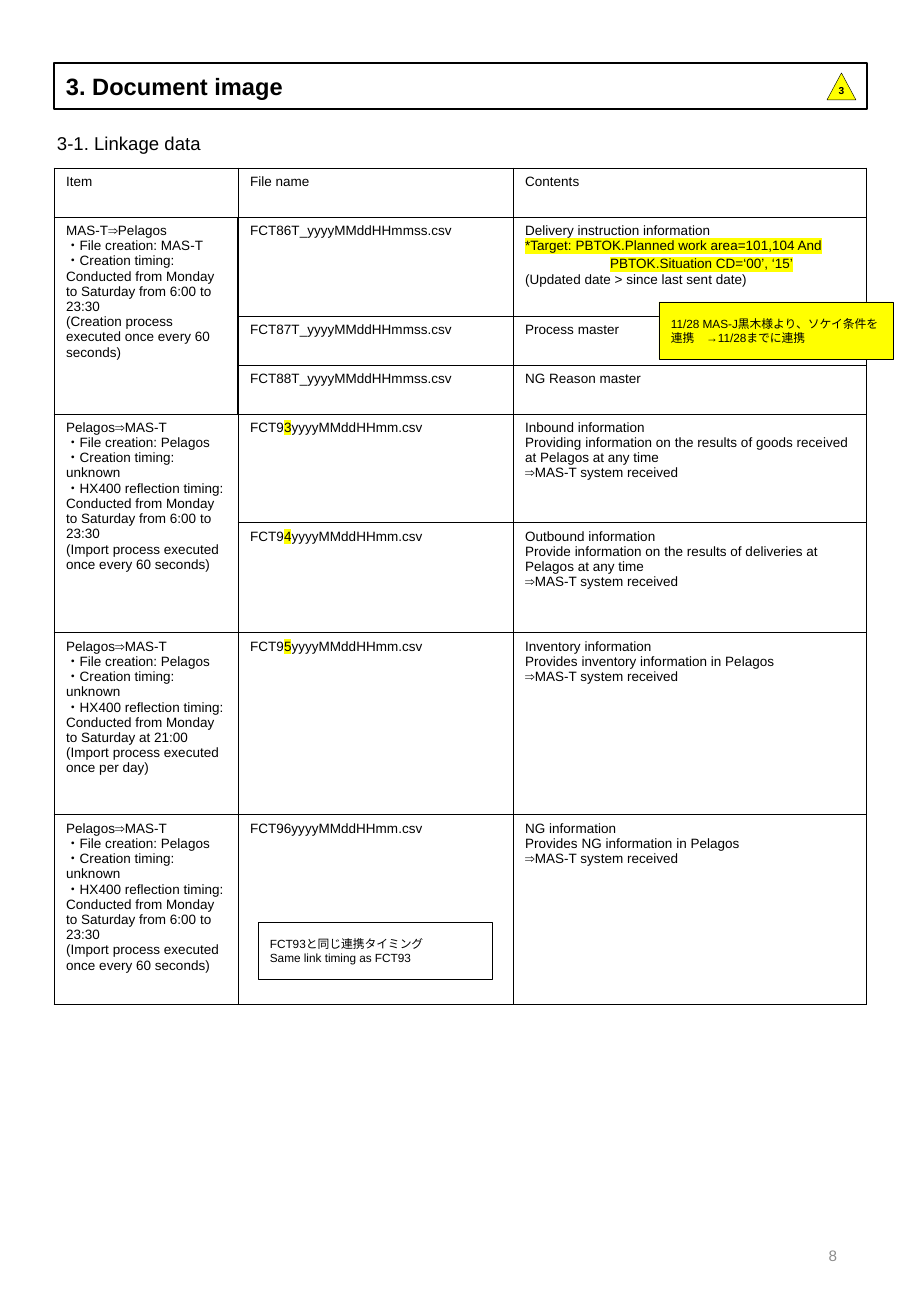
from dataclasses import dataclass
from typing import NamedTuple, Optional

from lxml import etree
from pptx import Presentation
from pptx import util as u
from pptx.dml.color import RGBColor
from pptx.enum import shapes, text
from pptx.oxml.ns import qn

SCALE = 7526  # EMU in one px
FONT = "Arial"
BLACK, GREY, WHITE, YELLOW = "000000", "8C8C8C", "FFFFFF", "FFFF00"
LEFT, MID, RIGHT = text.PP_ALIGN.LEFT, text.PP_ALIGN.CENTER, text.PP_ALIGN.RIGHT
RECT = shapes.MSO_SHAPE.RECTANGLE
TRI = shapes.MSO_SHAPE.ISOSCELES_TRIANGLE
TAB = 85


class Run(NamedTuple):
    text: str
    mark: bool = False


Line = list[Run]


@dataclass
class Style:
    size: float
    color: str = BLACK
    bold: bool = False
    align: text.PP_ALIGN = LEFT


@dataclass
class Box:
    at: tuple[int, int, int, int]
    lines: list[Line]
    style: Style
    kind: Optional[shapes.MSO_SHAPE] = None
    fill: Optional[str] = None
    width: float = 0.25
    middle: bool = True
    wrap: bool = True


def px(n: int) -> u.Emu:
    return u.Emu(n * SCALE)


def rgb(code: str) -> RGBColor:
    return RGBColor.from_string(code)


def plain(*rows: str) -> list[Line]:
    return [[Run(row)] for row in rows]


def add_run(para, run: Run, style: Style) -> None:
    item = para.add_run()
    item.text = run.text
    font = item.font
    font.size, font.bold, font.name = u.Pt(style.size), style.bold, FONT
    font.color.rgb = rgb(style.color)
    latin = font._element.find(qn("a:latin"))
    east = etree.Element(qn("a:ea"), typeface=FONT)
    latin.addnext(east)
    if run.mark:
        mark = etree.Element(qn("a:highlight"))
        etree.SubElement(mark, qn("a:srgbClr"), val=YELLOW)
        latin.addprevious(mark)


def add_tab(para) -> None:
    """Set one left tab stop, with room above the line."""
    para.space_before = u.Pt(1.8)
    stops = etree.SubElement(para._p.get_or_add_pPr(), qn("a:tabLst"))
    etree.SubElement(stops, qn("a:tab"), pos=str(px(TAB)), algn="l")


def write(frame, lines: list[Line], style: Style) -> None:
    for i, line in enumerate(lines):
        para = frame.paragraphs[0] if i == 0 else frame.add_paragraph()
        para.alignment = style.align
        if line[0].text == "\t":
            add_tab(para)
        for run in line:
            add_run(para, run, style)


def draw_box(slide, box: Box) -> None:
    at = [px(n) for n in box.at]
    if box.kind is None:
        shape = slide.shapes.add_textbox(*at)
    else:
        shape = slide.shapes.add_shape(box.kind, *at)
        shape.shadow.inherit = False
        shape.line.color.rgb = rgb(BLACK)
        shape.line.width = u.Pt(box.width)
        if box.fill:
            shape.fill.solid()
            shape.fill.fore_color.rgb = rgb(box.fill)
        else:
            shape.fill.background()
    frame = shape.text_frame
    frame.word_wrap = box.wrap
    if box.middle:
        frame.vertical_anchor = text.MSO_ANCHOR.MIDDLE
    if box.kind == TRI:
        frame.margin_top = 0
    write(frame, box.lines, box.style)


def edge(cell, side: str, width: float) -> None:
    line = etree.Element(qn(f"a:ln{side}"), w=str(u.Pt(width)))
    fill = etree.SubElement(line, qn("a:solidFill"))
    etree.SubElement(fill, qn("a:srgbClr"), val=BLACK)
    props = cell._tc.get_or_add_tcPr()
    props.insert("LRTB".index(side), line)


def item(when: str, how: str) -> list[Line]:
    return plain("Pelagos⇒MAS-T", "・File creation: Pelagos",
                 "・Creation timing: unknown", "・HX400 reflection timing:",
                 f"Conducted from Monday to Saturday {when}",
                 f"(Import process executed {how})")


def info(*rows: str) -> list[Line]:
    return plain(*rows, "⇒MAS-T system received")


def marked(digit: str) -> list[Line]:
    return [[Run("FCT9"), Run(digit, True), Run("yyyyMMddHHmm.csv")]]


DAY, MINUTE = "from 6:00 to 23:30", "once every 60 seconds"
COLS = [184, 275, 353]
ROWS = [49, 99, 49, 49, 109, 110, 182, 174]
SPANS = [(1, 3), (4, 5)]  # first and last row of each merged item
CELLS = [
    [plain("Item"), plain("File name"), plain("Contents")],
    [plain("MAS-T⇒Pelagos", "・File creation: MAS-T", "・Creation timing:",
           f"Conducted from Monday to Saturday {DAY}",
           f"(Creation process executed {MINUTE})"),
     plain("FCT86T_yyyyMMddHHmmss.csv"),
     [[Run("Delivery instruction information")],
      [Run("*Target: PBTOK.Planned work area=101,104 And", True)],
      [Run("\t", True), Run("PBTOK.Situation CD=‘00’, ‘15’", True)],
      [Run("(Updated date > since last sent date)")]]],
    [[], plain("FCT87T_yyyyMMddHHmmss.csv"), plain("Process master")],
    [[], plain("FCT88T_yyyyMMddHHmmss.csv"), plain("NG Reason master")],
    [item(DAY, MINUTE), marked("3"),
     info("Inbound information", "Providing information on the results of "
          "goods received at Pelagos at any time")],
    [[], marked("4"),
     info("Outbound information", "Provide information on the results of "
          "deliveries at Pelagos at any time")],
    [item("at 21:00", "once per day"), marked("5"),
     info("Inventory information", "Provides inventory information in Pelagos")],
    [item(DAY, MINUTE), plain("FCT96yyyyMMddHHmm.csv"),
     info("NG information", "Provides NG information in Pelagos")],
]


def draw_table(slide) -> None:
    table = slide.shapes.add_table(len(ROWS), len(COLS), px(54), px(168),
                                   px(sum(COLS)), px(sum(ROWS))).table
    table.first_row = table.horz_banding = False
    for col, wide in zip(table.columns, COLS):
        col.width = px(wide)
    for row, high in zip(table.rows, ROWS):
        row.height = px(high)
    for r, line in enumerate(CELLS):
        for c, lines in enumerate(line):
            cell = table.cell(r, c)
            cell.fill.background()
            write(cell.text_frame, lines, Style(8))
            for side in "LRTB":
                thick = 1 <= r <= 3 and (c, side) in [(0, "R"), (1, "L")]
                edge(cell, side, 1 if thick else 0.5)
    for top, end in SPANS:
        table.cell(top, 0).merge(table.cell(end, 0))


HEADS = [
    Box((644, 1220, 205, 70), plain("8"), Style(9, GREY, align=RIGHT)),
    Box((54, 63, 813, 46), plain("3. Document image"), Style(14, bold=True),
        RECT, width=1),
    Box((45, 126, 558, 35), plain("3-1. Linkage data"), Style(11), middle=False),
]
NOTES = [
    Box((827, 73, 29, 27), plain("3"), Style(6, bold=True, align=MID),
        TRI, YELLOW, wrap=False),
    Box((659, 302, 234, 57),
        plain("11/28 MAS-J黒木様より、ソケイ条件を連携　→11/28までに連携"),
        Style(7), RECT, YELLOW),
    Box((258, 922, 234, 57),
        plain("FCT93と同じ連携タイミング", "Same link timing as FCT93"),
        Style(7), RECT, WHITE),
]


def main() -> None:
    deck = Presentation()
    deck.slide_width, deck.slide_height = px(911), px(1316)
    slide = deck.slides.add_slide(deck.slide_layouts[6])
    for box in HEADS:
        draw_box(slide, box)
    draw_table(slide)
    for box in NOTES:
        draw_box(slide, box)
    deck.save("out.pptx")


if __name__ == "__main__":
    main()
